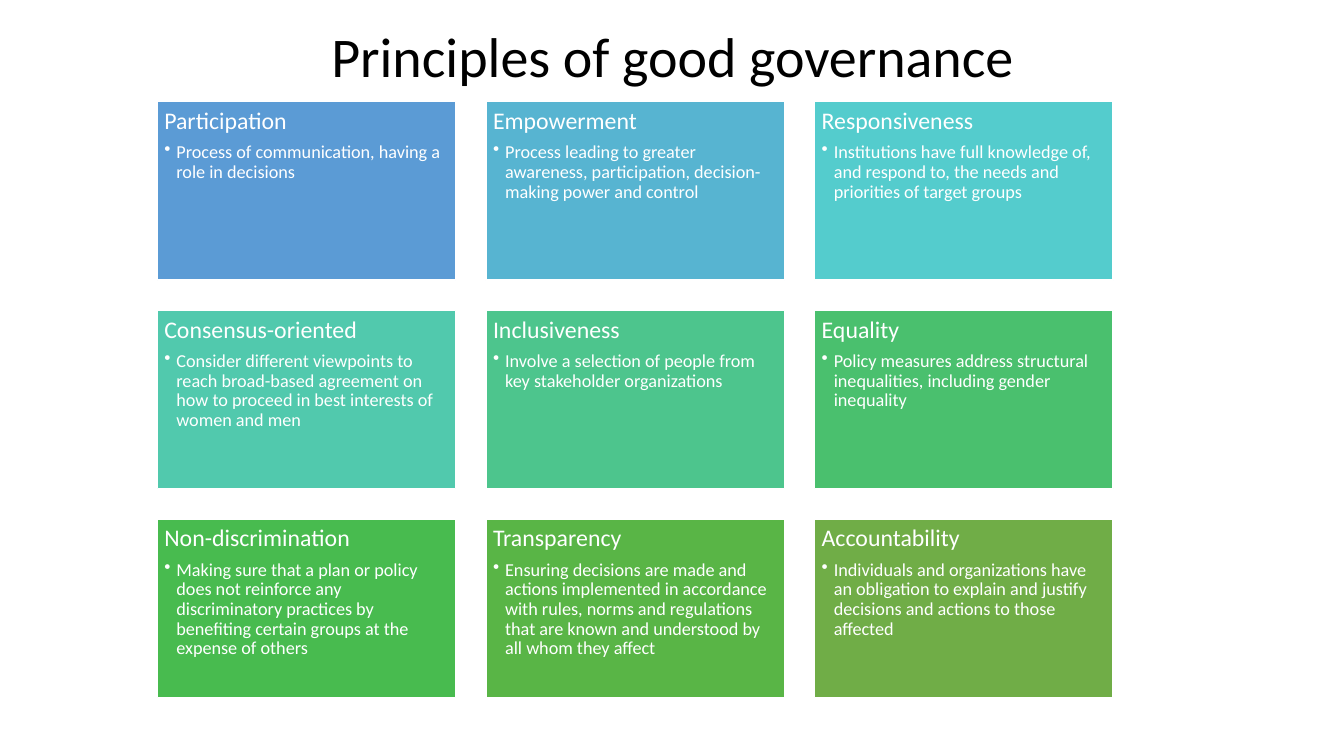
from pptx import Presentation
from pptx.dml.color import RGBColor
from pptx.enum.shapes import MSO_SHAPE
from pptx.enum.text import MSO_ANCHOR, PP_ALIGN
from pptx.oxml.ns import qn
from pptx.util import Inches, Pt
from lxml import etree

RECTANGLE = MSO_SHAPE.RECTANGLE
TOP, MIDDLE = MSO_ANCHOR.TOP, MSO_ANCHOR.MIDDLE
LEFT, CENTER = PP_ALIGN.LEFT, PP_ALIGN.CENTER

FONT = "Calibri"
COLORS = {
    "title": "000000",
    "white": "FFFFFF",
    "blue": "5B9BD5",
    "sky": "57B4D1",
    "cyan": "54CCCD",
    "turquoise": "51C9AD",
    "mint": "4DC58D",
    "emerald": "4AC06E",
    "green": "48BB4F",
    "leaf": "59B546",
    "olive": "70AD47",
}

# Card grid, in inches
COLUMNS = 3
GRID_LEFT, GRID_TOP = 1.56, 1.01
CARD_WIDTH, CARD_HEIGHT = 2.96, 1.77
GAP = 0.3
INSET = 0.07
BULLET_INDENT = 0.12

PRINCIPLES = [
    ("blue", "Participation",
     "Process of communication, having a role in decisions"),
    ("sky", "Empowerment",
     "Process leading to greater awareness, participation, "
     "decision-making power and control"),
    ("cyan", "Responsiveness",
     "Institutions have full knowledge of, and respond to, "
     "the needs and priorities of target groups"),
    ("turquoise", "Consensus-oriented",
     "Consider different viewpoints to reach broad-based agreement "
     "on how to proceed in best interests of women and men"),
    ("mint", "Inclusiveness",
     "Involve a selection of people from key stakeholder organizations"),
    ("emerald", "Equality",
     "Policy measures address structural inequalities, "
     "including gender inequality"),
    ("green", "Non-discrimination",
     "Making sure that a plan or policy does not reinforce any discriminatory "
     "practices by benefiting certain groups at the expense of others"),
    ("leaf", "Transparency",
     "Ensuring decisions are made and actions implemented in accordance with "
     "rules, norms and regulations that are known and understood by all "
     "whom they affect"),
    ("olive", "Accountability",
     "Individuals and organizations have an obligation to explain and justify "
     "decisions and actions to those affected"),
]


def color(name):
    return RGBColor.from_string(COLORS[name])


def write(para, text, size, color_name, align=LEFT, space_after=0):
    para.alignment = align
    para.line_spacing = 0.9
    para.space_after = Pt(space_after)
    span = para.add_run()
    span.text = text
    span.font.name = FONT
    span.font.size = Pt(size)
    span.font.color.rgb = color(color_name)


def add_bullet(para):
    properties = para._p.get_or_add_pPr()
    properties.set("marL", str(Inches(BULLET_INDENT)))
    properties.set("indent", str(-Inches(BULLET_INDENT)))
    etree.SubElement(properties, qn("a:buChar")).set("char", "•")


def add_title(page, text):
    box = page.shapes.add_textbox(
        Inches(0.92), Inches(-0.14), Inches(11.5), Inches(1.45))
    frame = box.text_frame
    frame.word_wrap = True
    frame.vertical_anchor = MIDDLE
    write(frame.paragraphs[0], text, 40, "title", CENTER)


def add_card(page, column, row, fill, heading, detail):
    card = page.shapes.add_shape(
        RECTANGLE,
        Inches(GRID_LEFT + column * (CARD_WIDTH + GAP)),
        Inches(GRID_TOP + row * (CARD_HEIGHT + GAP)),
        Inches(CARD_WIDTH), Inches(CARD_HEIGHT))
    card.shadow.inherit = False
    card.fill.solid()
    card.fill.fore_color.rgb = color(fill)
    card.line.color.rgb = color("white")
    card.line.width = Pt(1)

    frame = card.text_frame
    frame.word_wrap = True
    frame.vertical_anchor = TOP
    frame.margin_left = frame.margin_right = Inches(INSET)
    frame.margin_top = frame.margin_bottom = Inches(INSET)
    write(frame.paragraphs[0], heading, 17, "white", space_after=6)
    bullet = frame.add_paragraph()
    bullet.level = 1
    write(bullet, detail, 13, "white", space_after=2)
    add_bullet(bullet)


def main():
    deck = Presentation()
    deck.slide_width, deck.slide_height = Inches(13.33), Inches(7.5)
    page = deck.slides.add_slide(deck.slide_layouts[6])
    add_title(page, "Principles of good governance")
    for index, (fill, heading, detail) in enumerate(PRINCIPLES):
        row, column = divmod(index, COLUMNS)
        add_card(page, column, row, fill, heading, detail)
    deck.save("out.pptx")


if __name__ == "__main__":
    main()
